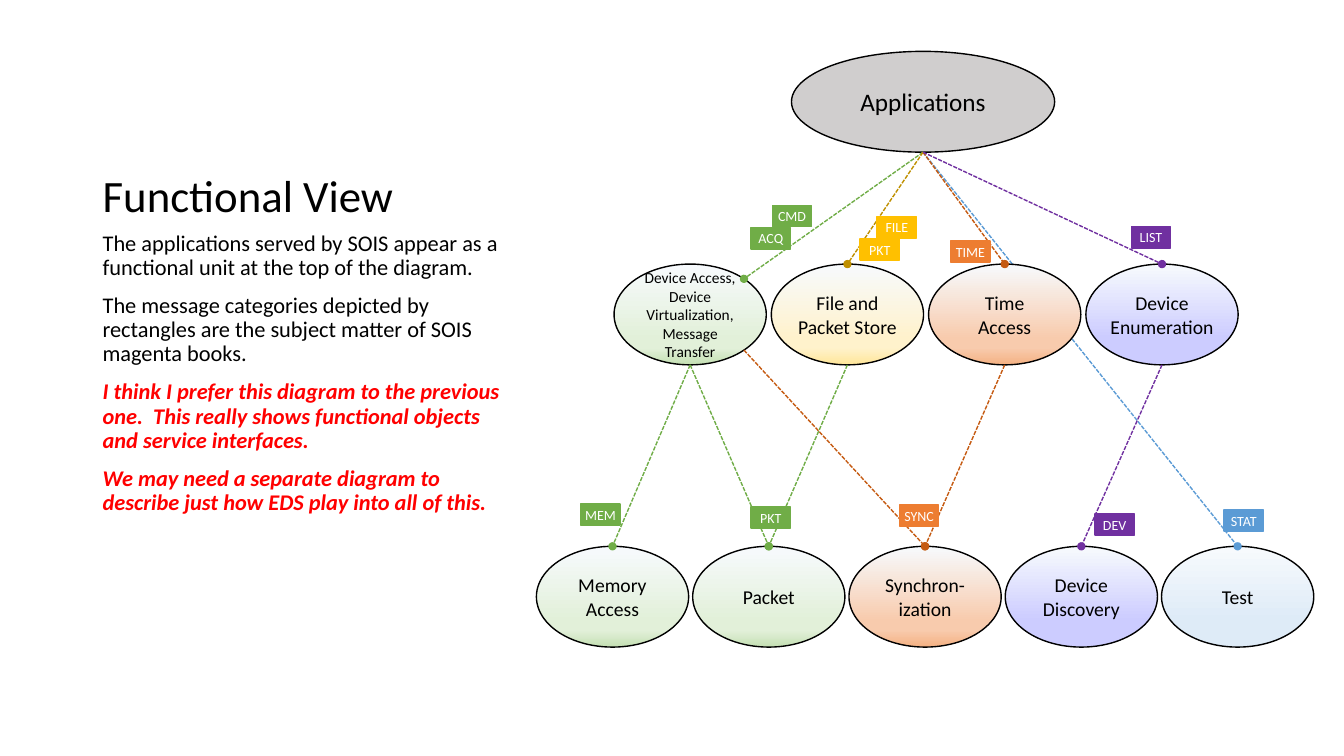
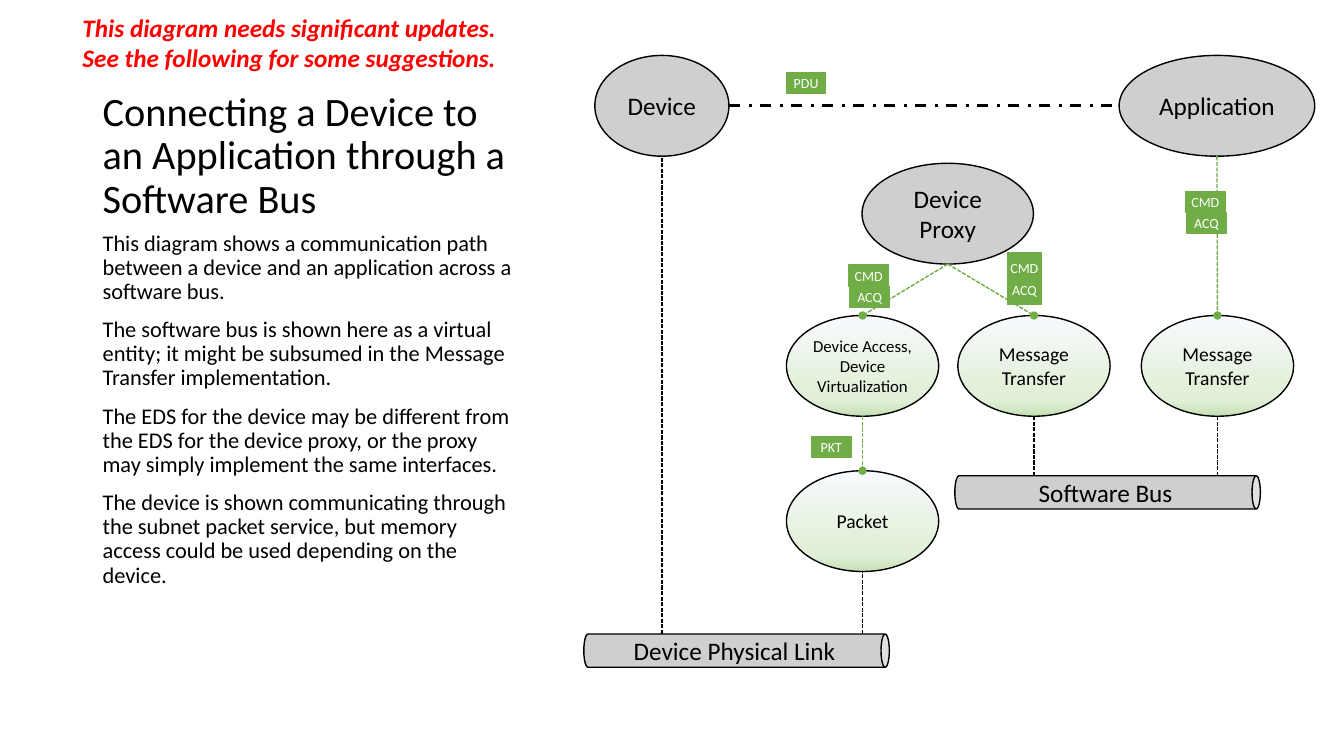
from math import cos, radians, sin

from lxml import etree
from pptx import Presentation
from pptx import util as u
from pptx.dml.color import RGBColor
from pptx.enum import dml, shapes, text
from pptx.oxml.ns import qn

FONT = "Calibri"
BLACK, WHITE, RED, GREY = "000000", "FFFFFF", "FF0000", "D0CECE"
GREEN, GOLD, AMBER, ORANGE = "70AD47", "BF9000", "FFC000", "ED7D31"
RUST, PURPLE, BLUE = "C55A11", "7030A0", "5B9BD5"

# Middle and end colours of the node gradients
MINT = ("E2F0D9", "C5E0B4")
CREAM = ("FFF2CC", "FFE699")
PEACH = ("F8CBAD", "F4B183")
LILAC = ("CCCCFF", "CCCCFF")
SKY = ("DEEBF7", "DEEBF7")

NODE_W, NODE_H = 1.51, 1
LABEL_W, LABEL_H = 0.39, 0.21
BUS_LENGTH, BUS_THICKNESS = 3.03, 0.33
TOP, LEFT, BOTTOM_LEFT, BOTTOM, BOTTOM_RIGHT, RIGHT, TOP_RIGHT = 0, 2, 3, 4, 5, 6, 7


def rgb(color):
    return RGBColor.from_string(color)


def format_runs(p, size, color=BLACK, emphasis=False):
    for r in p.runs:
        r.font.name = FONT
        r.font.size = u.Pt(size)
        r.font.color.rgb = rgb(color)
        if emphasis:
            r.font.bold = r.font.italic = True


def add_text(slide, box, paragraphs, size, anchor=text.MSO_ANCHOR.TOP,
             spacing=None, before=None, notes=()):
    """Add left-aligned paragraphs; those in notes come last, in red bold italic."""
    sp = slide.shapes.add_textbox(*map(u.Inches, box))
    tf = sp.text_frame
    tf.word_wrap = True
    tf.vertical_anchor = anchor
    tf.text = "\n".join([*paragraphs, *notes])
    for i, p in enumerate(tf.paragraphs):
        p.line_spacing = spacing
        p.space_before = before
        is_note = i >= len(paragraphs)
        format_runs(p, size, RED if is_note else BLACK, is_note)
    return sp


def add_title(slide, title, size):
    add_text(slide, (0.92, 0.5, 4.3, 1.75), [title], size,
             text.MSO_ANCHOR.BOTTOM, spacing=0.9)


def add_body(slide, paragraphs, notes=()):
    add_text(slide, (0.92, 2.25, 4.3, 4.17), paragraphs, 16,
             spacing=0.9, before=u.Pt(10), notes=notes)


def add_box(slide, kind, box, label, size, line=BLACK, color=BLACK, inset=0.0):
    sp = slide.shapes.add_shape(kind, *map(u.Inches, box))
    sp.shadow.inherit = False
    sp.line.color.rgb = rgb(line)
    sp.line.width = u.Pt(1)
    tf = sp.text_frame
    tf.word_wrap = True
    tf.margin_left = tf.margin_right = u.Inches(inset)
    tf.vertical_anchor = text.MSO_ANCHOR.MIDDLE
    tf.text = label
    p = tf.paragraphs[0]
    p.alignment = text.PP_ALIGN.CENTER
    format_runs(p, size, color)
    return sp


def fill_solid(sp, color):
    sp.fill.solid()
    sp.fill.fore_color.rgb = rgb(color)


def fill_gradient(sp, middle, end):
    sp.fill.gradient()
    sp.fill.gradient_angle = 270
    stops = sp._element.spPr.find(".//" + qn("a:gsLst"))
    for stop in list(stops):
        stops.remove(stop)
    for percent, color in ((0, "F7FAFD"), (74, middle), (83, middle), (100, end)):
        stop = etree.SubElement(stops, qn("a:gs"), pos=str(percent * 1000))
        etree.SubElement(stop, qn("a:srgbClr"), val=color)


def add_node(slide, x, y, label, tint, size=14, inset=0.0):
    sp = add_box(slide, shapes.MSO_SHAPE.OVAL, (x, y, NODE_W, NODE_H),
                 label, size, inset=inset)
    fill_gradient(sp, *tint)
    return sp


def add_actor(slide, x, y, w, label):
    sp = add_box(slide, shapes.MSO_SHAPE.OVAL, (x, y, w, NODE_H), label, 18, inset=0.1)
    fill_solid(sp, GREY)
    return sp


def add_label(slide, x, y, label, color, w=LABEL_W, h=LABEL_H):
    sp = add_box(slide, shapes.MSO_SHAPE.RECTANGLE, (x, y, w, h),
                 label, 10, line=color, color=WHITE)
    fill_solid(sp, color)


def add_bus(slide, x, y, label):
    """Add a can lying on its side, with its visible top left corner at x, y."""
    shift = (BUS_LENGTH - BUS_THICKNESS) / 2
    sp = add_box(slide, shapes.MSO_SHAPE.CAN,
                 (x + shift, y - shift, BUS_THICKNESS, BUS_LENGTH), label, 18, inset=0.1)
    fill_solid(sp, GREY)
    sp.rotation = 90
    sp.text_frame._txBody.bodyPr.set("vert", "vert270")


def site_point(oval, site):
    """Return connection site 0 to 7 of an oval, counted anticlockwise from the top."""
    angle = radians(45 * site)
    return (round(oval.left + oval.width / 2 * (1 - sin(angle))),
            round(oval.top + oval.height / 2 * (1 - cos(angle))))


def add_line(slide, start, end, color, width=1, dash=dml.MSO_LINE.SQUARE_DOT, dot=False):
    line = slide.shapes.add_connector(shapes.MSO_CONNECTOR.STRAIGHT, *start, *end)
    line.line.color.rgb = rgb(color)
    line.line.width = u.Pt(width)
    line.line.dash_style = dash
    sp_pr = line._element.spPr
    if dot:
        etree.SubElement(sp_pr.find(qn("a:ln")), qn("a:tailEnd"), type="oval")
    etree.SubElement(sp_pr, qn("a:effectLst"))
    return line


def glue(end, oval, site):
    end.id, end.idx = oval.shape_id, site


def link(slide, source, target, color, start=BOTTOM, end=TOP, dot=True, **style):
    """Join two ovals at their connection sites."""
    line = add_line(slide, site_point(source, start), site_point(target, end),
                    color, dot=dot, **style)
    ends = line._element.nvCxnSpPr.cNvCxnSpPr
    glue(ends.get_or_add_stCxn(), source, start)
    glue(ends.get_or_add_endCxn(), target, end)


def drop_to_bus(slide, oval, bus_y):
    """Draw a vertical line from the top of a bus up to the bottom of an oval."""
    x, y = site_point(oval, BOTTOM)
    line = add_line(slide, (x, u.Inches(bus_y)), (x, y), BLACK)
    glue(line._element.nvCxnSpPr.cNvCxnSpPr.get_or_add_endCxn(), oval, BOTTOM)


def functional_view(slide):
    add_title(slide, "Functional View", 32)
    add_body(slide, [
        "The applications served by SOIS appear as a functional unit at the top of the diagram.",
        "The message categories depicted by rectangles are the subject matter of "
        "SOIS magenta books.",
    ], notes=[
        "I think I prefer this diagram to the previous one.  This really shows "
        "functional objects and service interfaces.",
        "We may need a separate diagram to describe just how EDS play into all of this.",
    ])

    upper_x = [6.09 + 1.56 * i for i in range(4)]
    lower_x = [5.32 + 1.55 * i for i in range(5)]
    upper_y, lower_y = 2.62, 5.42

    apps = add_actor(slide, 7.85, 0.51, 2.61, "Applications")
    test = add_node(slide, lower_x[4], lower_y, "Test", SKY)
    link(slide, apps, test, BLUE)  # passes behind Time Access

    access, store, time, enumeration = [
        add_node(slide, x, upper_y, *node) for x, node in zip(upper_x, [
            ("Device Access, Device Virtualization, Message Transfer", MINT, 11),
            ("File and Packet Store", CREAM),
            ("Time Access", PEACH, 14, 0.1),
            ("Device Enumeration", LILAC),
        ])]
    memory, packet, sync, discovery = [
        add_node(slide, x, lower_y, *node) for x, node in zip(lower_x, [
            ("Memory Access", MINT),
            ("Packet", MINT),
            ("Synchron-ization", PEACH),
            ("Device Discovery", LILAC),
        ])]

    link(slide, apps, access, GREEN, end=TOP_RIGHT)
    link(slide, access, sync, RUST, start=BOTTOM_RIGHT)
    for source, target, color in [
        (apps, time, RUST), (apps, store, GOLD), (apps, enumeration, PURPLE),
        (time, sync, RUST), (access, memory, GREEN), (access, packet, GREEN),
        (store, packet, GREEN), (enumeration, discovery, PURPLE),
    ]:
        link(slide, source, target, color)

    for x, y, label, color in [
        (8.7, 2.15, "FILE", AMBER), (8.53, 2.37, "PKT", AMBER),
        (9.43, 2.39, "TIME", ORANGE), (8.92, 5.01, "SYNC", ORANGE),
        (11.22, 2.25, "LIST", PURPLE), (10.86, 5.1, "DEV", PURPLE),
        (12.14, 5.06, "STAT", BLUE), (7.45, 5.03, "PKT", GREEN),
        (5.76, 5, "MEM", GREEN), (7.66, 2.04, "CMD", GREEN),
        (7.45, 2.26, "ACQ", GREEN),
    ]:
        add_label(slide, x, y, label, color)


def software_bus(slide):
    add_title(slide, "Connecting a Device to an Application through a Software Bus", 28.8)
    add_body(slide, [
        "This diagram shows a communication path between a device and an application "
        "across a software bus.",
        "The software bus is shown here as a virtual entity; it might be subsumed in the "
        "Message Transfer implementation.",
        "The EDS for the device may be different from the EDS for the device proxy, or the "
        "proxy may simply implement the same interfaces.",
        "The device is shown communicating through the subnet packet service, but memory "
        "access could be used depending on the device.",
    ])
    note = add_text(slide, (0.72, 0.07, 4.54, 0.71), [], 18, notes=[
        "This diagram needs significant updates.  See the following for some suggestions."])
    note.text_frame.auto_size = text.MSO_AUTO_SIZE.SHAPE_TO_FIT_TEXT

    service_y, link_y, bus_y = 3.13, 6.29, 4.72
    device = add_actor(slide, 5.9, 0.55, 1.33, "Device")
    proxy = add_actor(slide, 8.55, 1.62, 1.7, "Device Proxy")
    app = add_actor(slide, 11.1, 0.55, 1.94, "Application")
    access = add_node(slide, 7.8, service_y, "Device Access, Device Virtualization", MINT, 12)
    proxy_transfer, app_transfer = [
        add_node(slide, x, service_y, "Message Transfer", MINT) for x in (9.5, 11.32)]
    packet = add_node(slide, 7.8, 4.67, "Packet", MINT)
    add_bus(slide, 9.47, bus_y, "Software Bus")
    add_bus(slide, 5.79, link_y, "Device Physical Link")

    for source, target in [(proxy, access), (proxy, proxy_transfer),
                           (app, app_transfer), (access, packet)]:
        link(slide, source, target, GREEN)
    link(slide, device, app, BLACK, RIGHT, LEFT, dot=False,
         width=2, dash=dml.MSO_LINE.DASH_DOT)
    for oval, y in [(device, link_y), (packet, link_y),
                    (proxy_transfer, bus_y), (app_transfer, bus_y)]:
        drop_to_bus(slide, oval, y)

    add_label(slide, 7.8, 0.72, "PDU", GREEN)
    add_label(slide, 8.05, 4.33, "PKT", GREEN)
    for x, y in [(8.42, 2.63), (11.76, 1.9)]:
        add_label(slide, x, y, "CMD", GREEN)
        add_label(slide, x + 0.01, y + 0.21, "ACQ", GREEN)
    add_label(slide, 9.99, 2.51, "CMD", GREEN, 0.34, 0.3)
    add_label(slide, 9.99, 2.74, "ACQ", GREEN, 0.34, 0.28)


def main():
    prs = Presentation()
    prs.slide_width, prs.slide_height = u.Inches(13.33), u.Inches(7.5)
    for build in (functional_view, software_bus):
        build(prs.slides.add_slide(prs.slide_layouts[6]))
    prs.save("out.pptx")


if __name__ == "__main__":
    main()
